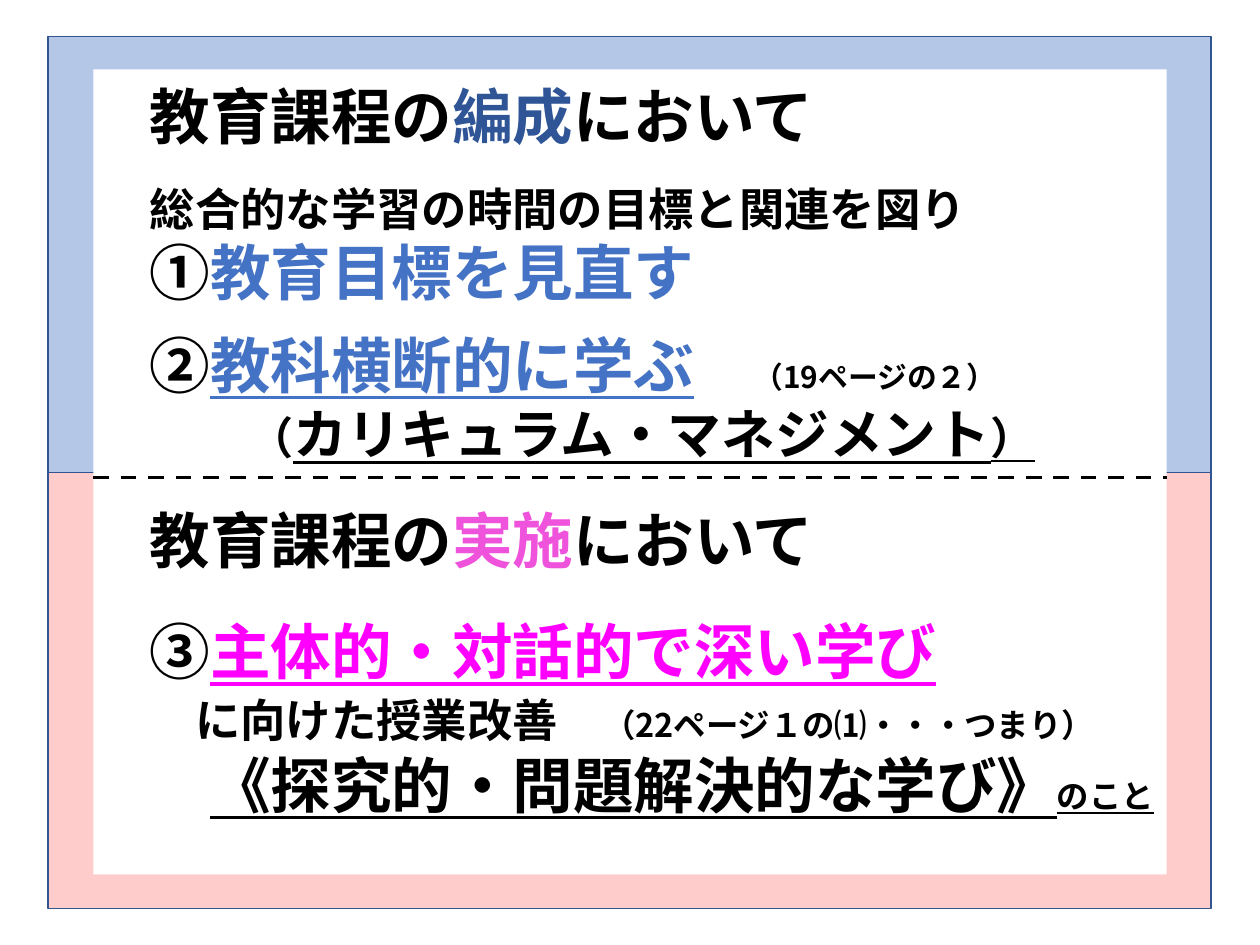
from pptx import Presentation
from pptx.dml.color import RGBColor
from pptx.enum.dml import MSO_LINE
from pptx.enum.shapes import MSO_CONNECTOR, MSO_SHAPE
from pptx.enum.text import MSO_ANCHOR
from pptx.oxml.ns import qn
from pptx.util import Inches, Pt
from lxml import etree

FONT = "Noto Sans CJK JP"
BLACK = RGBColor(0x00, 0x00, 0x00)
WHITE = RGBColor(0xFF, 0xFF, 0xFF)
PALE_BLUE = RGBColor(0xB4, 0xC7, 0xE7)
PALE_PINK = RGBColor(0xFF, 0xCC, 0xCC)
BORDER = RGBColor(0x32, 0x54, 0x91)
NAVY = RGBColor(0x2F, 0x55, 0x97)
BLUE = RGBColor(0x44, 0x72, 0xC4)
PINK = RGBColor(0xEF, 0x53, 0xDC)
MAGENTA = RGBColor(0xFF, 0x00, 0xFF)

LARGE, MEDIUM, SMALL = 34.6, 25.9, 18.5
PAGE_REF_TAB = 4.79

# Each line: (space before in points, indent in inches, runs);
# each run: (text, size, colour, underlined)
LINES = [
    (0, 0, [("教育課程の", LARGE, BLACK, False),
            ("編成", LARGE, NAVY, False),
            ("において", LARGE, BLACK, False)]),
    (16.4, 0, [("総合的な学習の時間の目標と関連を図り", MEDIUM, BLACK, False)]),
    (0, 0, [("①", LARGE, BLACK, False),
            ("教育目標を見直す", LARGE, BLUE, False)]),
    (11.5, 0, [("②", LARGE, BLACK, False),
               ("教科横断的に学ぶ", LARGE, BLUE, True),
               ("\t（19ページの２）", 17, BLACK, False)]),
    (0, 0.79, [("（", 25.2, BLACK, False),
               ("カリキュラム・マネジメント", 30.7, BLACK, True),
               ("）", 25.2, BLACK, True)]),
    (21.8, 0, [("教育課程の", LARGE, BLACK, False),
               ("実施", LARGE, PINK, False),
               ("において", LARGE, BLACK, False)]),
    (21.8, 0, [("③", LARGE, BLACK, False),
               ("主体的・対話的で深い学び", LARGE, MAGENTA, True)]),
    (3.3, 0.36, [("に向けた授業改善　", MEDIUM, BLACK, False),
                 ("（22ページ１の⑴・・・つまり）", SMALL, BLACK, False)]),
    (0.3, 0.48, [("《探究的・問題解決的な学び》", LARGE, BLACK, True),
                 ("のこと", SMALL, BLACK, True)]),
]


def add_panel(slide, left, top, width, height, fill, border=None):
    panel = slide.shapes.add_shape(
        MSO_SHAPE.RECTANGLE, Inches(left), Inches(top), Inches(width), Inches(height))
    panel.shadow.inherit = False
    panel.fill.solid()
    panel.fill.fore_color.rgb = fill
    if border is None:
        panel.line.fill.background()
    else:
        panel.line.color.rgb = border
        panel.line.width = Pt(1)


def add_background(slide, left, top, width, height):
    """Blue upper and pink lower half behind a white sheet."""
    upper_height = height / 2
    add_panel(slide, left, top + upper_height - 0.28, width, upper_height + 0.28,
              PALE_PINK, BORDER)
    add_panel(slide, left, top, width, upper_height, PALE_BLUE, BORDER)
    add_panel(slide, 0.74, 0.55, 8.52, 6.39, WHITE)


def add_divider(slide, left, right, y):
    divider = slide.shapes.add_connector(
        MSO_CONNECTOR.STRAIGHT, Inches(left), Inches(y), Inches(right), Inches(y))
    divider.line.color.rgb = BLACK
    divider.line.width = Pt(2.25)
    divider.line.dash_style = MSO_LINE.DASH
    etree.SubElement(divider._element.spPr, qn("a:effectLst"))


def add_text_run(paragraph, text, size, color, underlined):
    run = paragraph.add_run()
    run.text = text
    run.font.size = Pt(size)
    run.font.bold = True
    run.font.underline = underlined
    run.font.color.rgb = color
    run.font.name = FONT
    east_asian = etree.SubElement(run.font._element, qn("a:ea"))
    east_asian.set("typeface", FONT)


def add_curriculum_text(slide, left, top, width, height):
    box = slide.shapes.add_textbox(
        Inches(left), Inches(top), Inches(width), Inches(height))
    frame = box.text_frame
    frame.word_wrap = True
    frame.vertical_anchor = MSO_ANCHOR.TOP
    frame.margin_top = Inches(0.63)
    for index, (space_before, indent, runs) in enumerate(LINES):
        paragraph = frame.add_paragraph() if index else frame.paragraphs[0]
        properties = paragraph._p.get_or_add_pPr()
        properties.set("marL", str(Inches(indent)))
        if any("\t" in run[0] for run in runs):
            tabs = etree.SubElement(properties, qn("a:tabLst"))
            etree.SubElement(tabs, qn("a:tab"), pos=str(Inches(PAGE_REF_TAB)), algn="l")
        paragraph.line_spacing = 1.0
        paragraph.space_before = Pt(space_before)
        for run in runs:
            add_text_run(paragraph, *run)


def main():
    presentation = Presentation()
    presentation.slide_width = Inches(10)
    presentation.slide_height = Inches(7.5)
    slide = presentation.slides.add_slide(presentation.slide_layouts[6])
    add_background(slide, 0.38, 0.29, 9.23, 6.92)
    add_curriculum_text(slide, 1.09, 0, 8.29, 6.65)
    add_divider(slide, 0.74, 9.26, 3.79)
    presentation.save("out.pptx")


if __name__ == "__main__":
    main()
